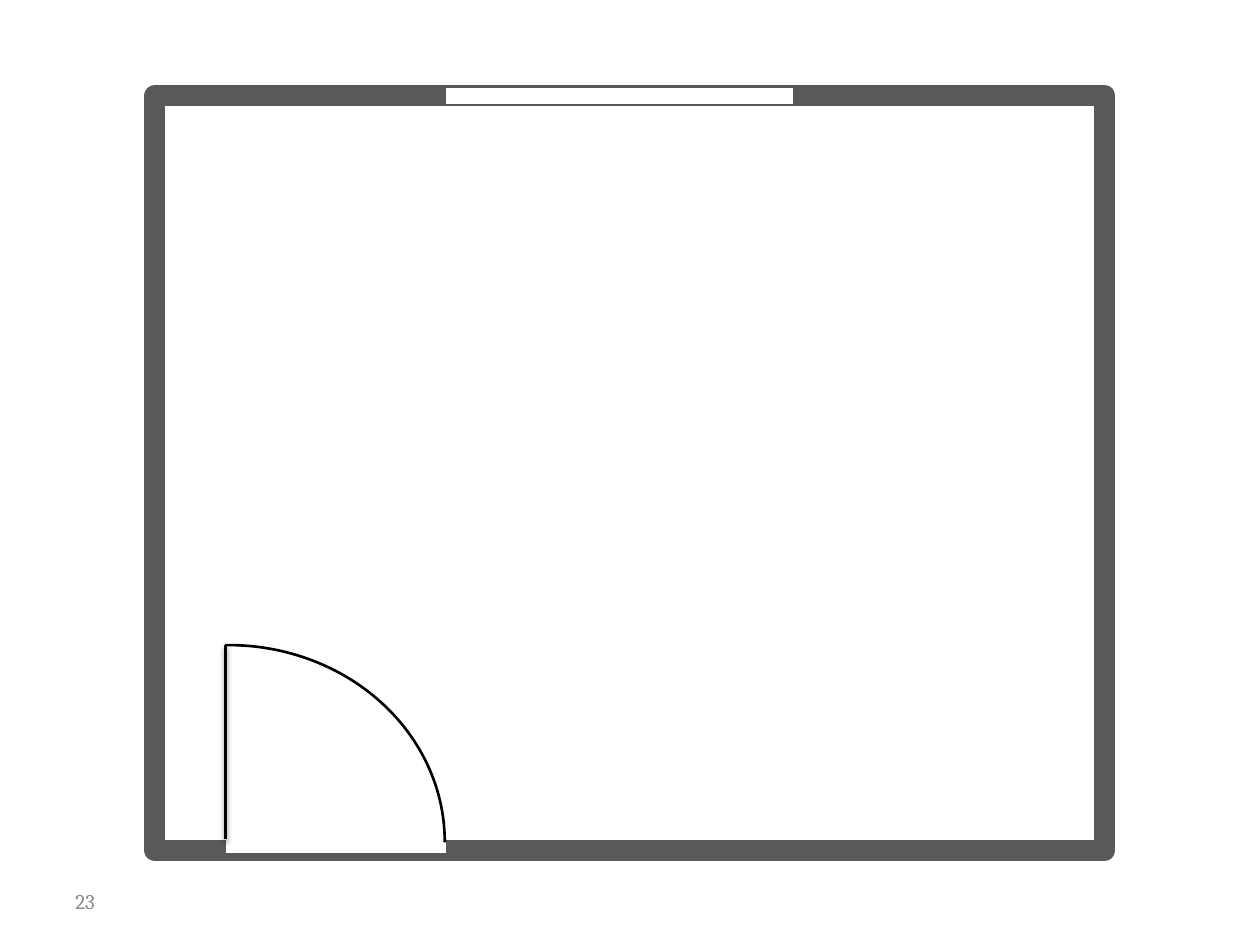
from pptx import Presentation
from pptx.dml.color import RGBColor
from pptx.enum.shapes import MSO_CONNECTOR, MSO_SHAPE
from pptx.enum.text import MSO_ANCHOR, PP_ALIGN
from pptx.oxml import parse_xml
from pptx.oxml.ns import nsdecls
from pptx.util import Inches, Pt

WHITE = RGBColor(0xFF, 0xFF, 0xFF)
BLACK = RGBColor(0, 0, 0)
WALL = RGBColor(0x59, 0x59, 0x59)
GREY = RGBColor(0x8C, 0x8C, 0x8C)

WIDE, HIGH = 10, 7.5
PAGE = "23"
ROOM = (1.23, 0.76, 7.54, 5.99)
HINGE, JAMB, PANE = 1.79, 3.54, 6.29
SILL, FOOT, TIP = 6.71, 6.66, 5.12
SWING = (0.1, TIP, 3.43, 3.12)
SWEEP = (161.377, 0.099)
SHADE = (
    '<a:outerShdw blurRad="39370" dist="20320" dir="5400000" rotWithShape="0">'
    '<a:srgbClr val="000000"><a:alpha val="38000"/></a:srgbClr></a:outerShdw>'
)
LINES = [
    ((HINGE, SILL), (JAMB, SILL), WHITE, 9, ""),
    ((JAMB, ROOM[1]), (PANE, ROOM[1]), WHITE, 9, ""),
    ((HINGE, FOOT), (HINGE, TIP), BLACK, 2, SHADE),
]


def ink(item, color, width):
    item.line.color.rgb = color
    item.line.width = Pt(width)


def outline(slide, kind, box, color, width):
    shape = slide.shapes.add_shape(kind, *map(Inches, box))
    shape.shadow.inherit = False
    shape.fill.background()
    ink(shape, color, width)
    return shape


def stroke(slide, start, end, color, width, effect):
    line = slide.shapes.add_connector(
        MSO_CONNECTOR.STRAIGHT, *map(Inches, start + end))
    ink(line, color, width)
    line._element.spPr.append(parse_xml(
        f"<a:effectLst {nsdecls('a')}>{effect}</a:effectLst>"))


def number(slide):
    box = slide.shapes.add_textbox(*map(Inches, (0.5, 6.95, 2.33, 0.4)))
    frame = box.text_frame
    frame.word_wrap = True
    frame.vertical_anchor = MSO_ANCHOR.MIDDLE
    frame.text = PAGE
    para = frame.paragraphs[0]
    para.alignment = PP_ALIGN.LEFT
    font = para.runs[0].font
    font.name, font.size = "Cambria", Pt(12)
    font.color.rgb = GREY


def main():
    deck = Presentation()
    deck.slide_width, deck.slide_height = Inches(WIDE), Inches(HIGH)
    slide = deck.slides.add_slide(deck.slide_layouts[6])
    slide.background.fill.solid()
    slide.background.fill.fore_color.rgb = WHITE
    number(slide)
    outline(slide, MSO_SHAPE.RECTANGLE, ROOM, WALL, 12)
    for row in LINES:
        stroke(slide, *row)
    arc = outline(slide, MSO_SHAPE.ARC, SWING, BLACK, 1.5)
    for i, turn in enumerate(SWEEP):
        arc.adjustments[i] = turn
    deck.save("out.pptx")


if __name__ == "__main__":
    main()
